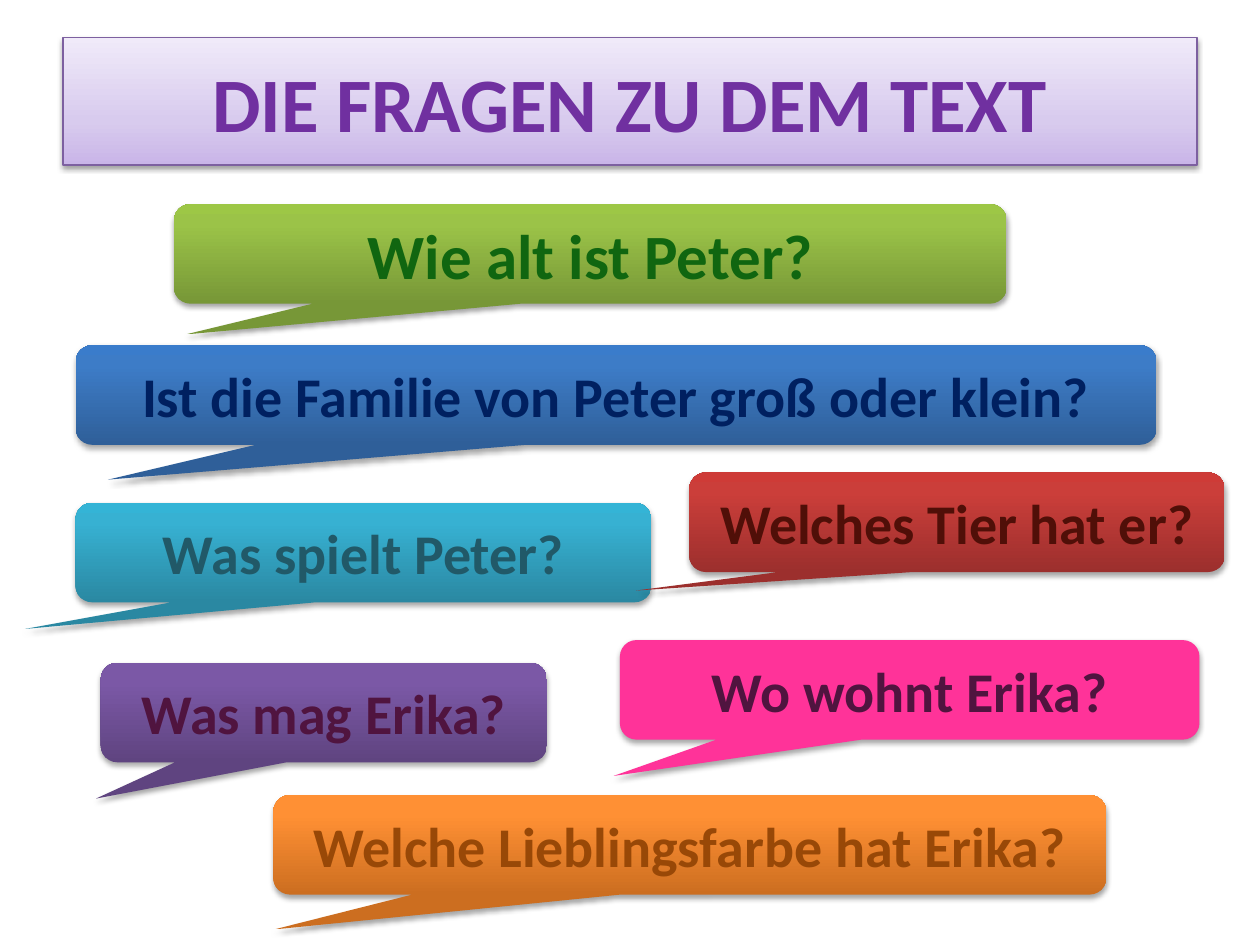
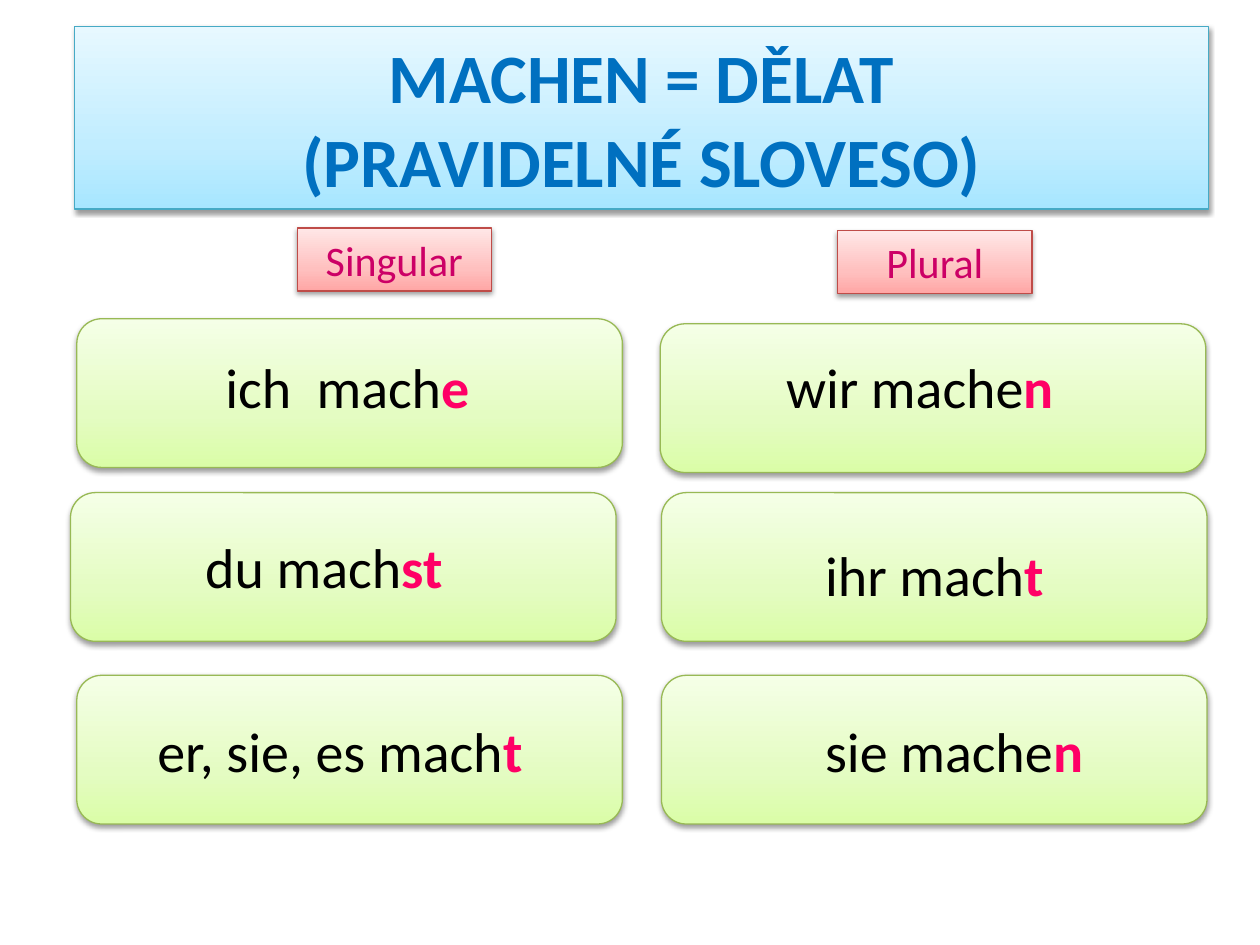
from dataclasses import dataclass

from lxml import etree
from pptx import Presentation
from pptx import util as u
from pptx.dml.color import RGBColor
from pptx.enum import shapes, text
from pptx.oxml.ns import qn

# Places are left, top, width, height on a 10 x 7.5 grid of inches.
HEADS = [
    (["DIE FRAGEN ZU DEM TEXT"], (0.5, 0.3, 9, 1.01), 44, "7030A0", "violet"),
    (["MACHEN = DĚLAT", "(PRAVIDELNÉ SLOVESO)"], (0.59, 0.21, 9, 1.45),
     39.6, "0070C0", "sky"),
]

# Question, left, top, width, tip of the callout, size, ink, fill
ASKS = [
    ("Wie alt ist Peter?", 1.38, 1.62, 6.61, (-0.486, 0.809), 36, "106610", "green"),
    ("Ist die Familie von Peter groß oder klein?", 0.6, 2.74, 8.58,
     (-0.47, 0.85), 32, "002060", "blue"),
    ("Was spielt Peter?", 0.6, 3.99, 4.57, (-0.588, 0.768), 32, "215968", "teal"),
    ("Welches Tier hat er?", 5.47, 3.75, 4.25, (-0.6, 0.686), 32, "500F08", "red"),
    ("Welche Lieblingsfarbe hat Erika?", 2.17, 6.31, 6.61,
     (-0.499, 0.85), 32, "984807", "orange"),
    ("Was mag Erika?", 0.8, 5.26, 3.54, (-0.511, 0.865), 32, "50143F", "purple"),
    ("Wo wohnt Erika?", 4.92, 5.08, 4.6, (-0.511, 0.865), 32, "50143F", "pink"),
]
ASK_H = 0.79

# Stem, ending, corner of the card, place of the words
FORMS = [
    ("ich  mach", "e", (0.61, 2.53), (1.69, 2.75, 2.51, 0.64)),
    ("du mach", "st", (0.56, 3.91), (1.53, 4.18, 2.5, 1.18)),
    ("er, sie, es mach", "t", (0.61, 5.36), (1.15, 5.64, 3.59, 1.18)),
    ("wir mache", "n", (5.24, 2.57), (6.14, 2.75, 2.74, 1.18)),
    ("ihr mach", "t", (5.25, 3.91), (6.45, 4.24, 2.43, 1.18)),
    ("sie mache", "n", (5.25, 5.36), (6.45, 5.64, 2.63, 1.18)),
]
CARD = (4.33, 1.18)

TAGS = [("Singular", (2.36, 1.81)), ("Plural", (6.65, 1.83))]
TAG = (1.54, 0.5)


@dataclass(frozen=True)
class Theme:
    font = "Calibri"
    body, label = 32, 24
    ink, accent, tag = "000000", "FF0066", "CC0066"
    edge = 0.75
    # Pale fills: colours from the bottom up, then the outline
    pale = {
        "violet": ("C9B5E8", "D8CBEE", "F0EAF9", "7D60A0"),
        "sky": ("A7E6FF", "C1EDFF", "E7F8FF", "46AAC5"),
        "lime": ("DAFDA7", "E4FCC2", "F5FFE7", "98B955"),
        "rose": ("FFA6A5", "FFC0BF", "FFE7E7", "BF4C48"),
    }
    # Strong fills have no outline; a single colour is a flat fill
    strong = {
        "green": ("779737", "9BC348", "9DC746"),
        "blue": ("2F5F99", "3D7CC7", "3A7CCB"),
        "teal": ("2A88A2", "37B1D2", "34B4D6"),
        "red": ("9C2F2D", "CB3E3A", "CE3B37"),
        "orange": ("CC6E20", "FF9034", "FF9136"),
        "purple": ("5F4480", "7B58A6", "7C57A8"),
        "pink": ("FF3399",),
    }
    # Middle stop, shadow opacity and shadow distance
    soft, bold = (35, 38, 1.6), (80, 35, 1.8)
    blur = 3.1


T = Theme()
KIND = shapes.MSO_SHAPE


def rgb(code):
    return RGBColor.from_string(code)


def node(up, tag, **attrs):
    return etree.SubElement(up, qn(tag), {k: str(v) for k, v in attrs.items()})


def blend(shape, hues, mid):
    """Fill with three colours running from the bottom to the top."""
    shape.fill.gradient()
    grad = shape._element.spPr.find(qn("a:gradFill"))
    for kid in list(grad):
        grad.remove(kid)
    stops = node(grad, "a:gsLst")
    for place, hue in zip((0, mid, 100), hues):
        node(node(stops, "a:gs", pos=place * 1000), "a:srgbClr", val=hue)
    node(grad, "a:lin", ang=270 * 60000, scaled=0)


def shade(shape, alpha, dist):
    """Cast a soft shadow straight down."""
    shape.shadow.inherit = False
    drop = node(shape._element.spPr.find(qn("a:effectLst")), "a:outerShdw",
                blurRad=u.Pt(T.blur), dist=u.Pt(dist), dir=90 * 60000,
                rotWithShape=0)
    node(node(drop, "a:srgbClr", val="000000"), "a:alpha", val=alpha * 1000)


def panel(slide, kind, box, name):
    shape = slide.shapes.add_shape(kind, *map(u.Inches, box))
    pale = name in T.pale
    hues = T.pale[name] if pale else T.strong[name]
    mid, alpha, dist = T.soft if pale else T.bold
    if len(hues) == 1:
        shape.fill.solid()
        shape.fill.fore_color.rgb = rgb(hues[0])
    else:
        blend(shape, hues[:3], mid)
    if pale:
        shape.line.color.rgb = rgb(hues[3])
        shape.line.width = u.Pt(T.edge)
    else:
        shape.line.fill.background()
    shade(shape, alpha, dist)
    return shape


def write(shape, runs, size, mid=True, gap=False):
    """Add (words, colour, bold) runs, with a line break between them if gap."""
    frame = shape.text_frame
    frame.word_wrap = True
    frame.vertical_anchor = text.MSO_ANCHOR.MIDDLE if mid else text.MSO_ANCHOR.TOP
    para = frame.paragraphs[0]
    para.alignment = text.PP_ALIGN.CENTER if mid else text.PP_ALIGN.LEFT
    for i, (words, hue, bold) in enumerate(runs):
        if gap and i:
            para.add_line_break()
        run = para.add_run()
        run.text = words
        run.font.name, run.font.size, run.font.bold = T.font, u.Pt(size), bold
        run.font.color.rgb = rgb(hue)


def start(deck, head):
    """Add a blank slide with its title band."""
    lines, box, size, hue, fill = head
    slide = deck.slides.add_slide(deck.slide_layouts[6])
    band = panel(slide, KIND.RECTANGLE, box, fill)
    write(band, [(line, hue, True) for line in lines], size, gap=True)
    return slide


def ask(slide):
    for words, x, y, w, tip, size, hue, fill in ASKS:
        call = panel(slide, KIND.ROUNDED_RECTANGULAR_CALLOUT, (x, y, w, ASK_H), fill)
        for i, value in enumerate(tip):
            call.adjustments[i] = value
        write(call, [(words, hue, True)], size)


def verb(slide):
    for _, _, spot, _ in FORMS:
        panel(slide, KIND.ROUNDED_RECTANGLE, spot + CARD, "lime")
    for stem, end, _, box in FORMS:
        note = slide.shapes.add_textbox(*map(u.Inches, box))
        write(note, [(stem, T.ink, False), (end, T.accent, True)], T.body, mid=False)
    for words, spot in TAGS:
        tag = panel(slide, KIND.RECTANGLE, spot + TAG, "rose")
        write(tag, [(words, T.tag, False)], T.label)


def main():
    deck = Presentation()
    deck.slide_width, deck.slide_height = u.Inches(10), u.Inches(7.5)
    for head, draw in zip(HEADS, (ask, verb)):
        draw(start(deck, head))
    deck.save("out.pptx")


if __name__ == "__main__":
    main()
